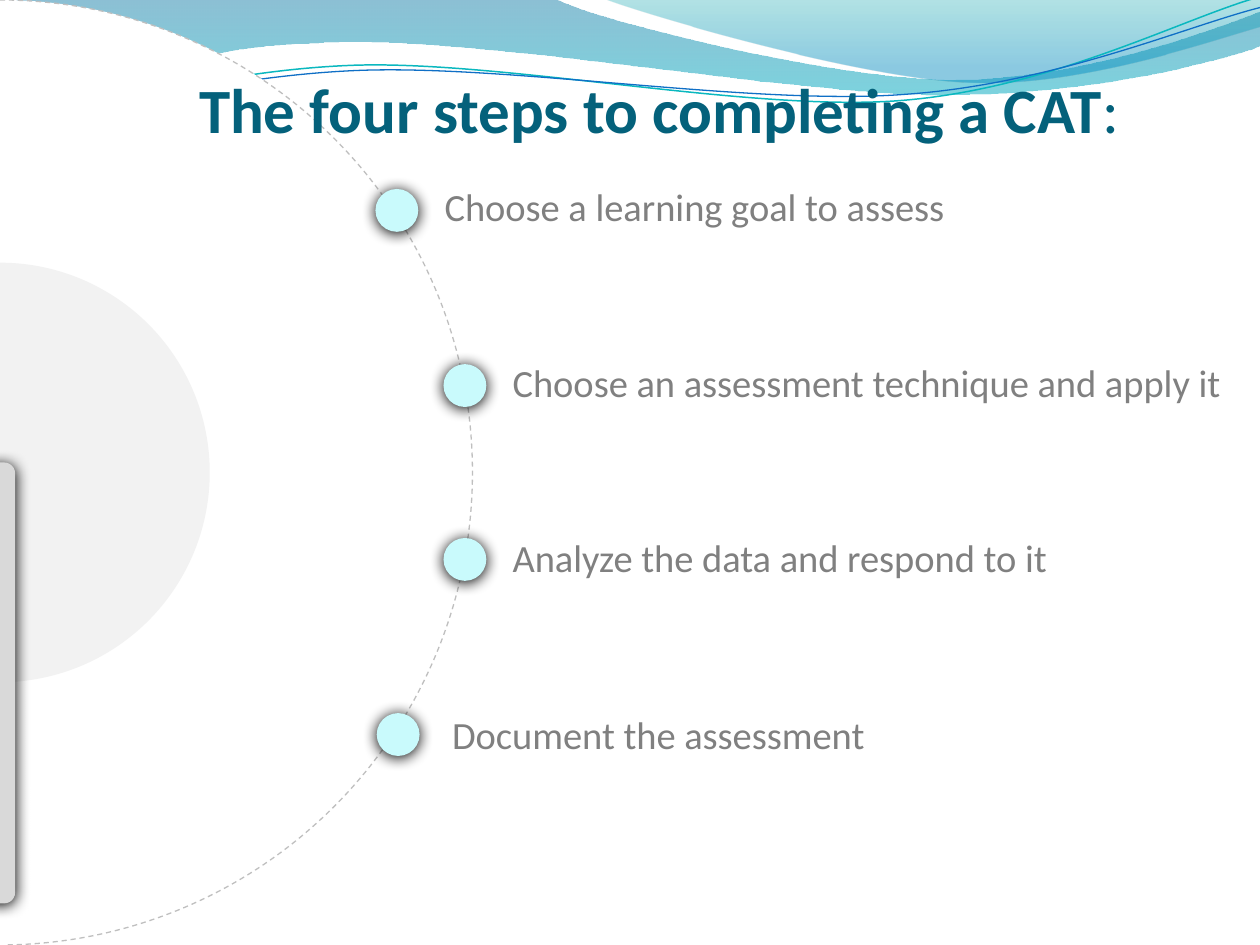
"""Build the slide showing the four steps to completing a CAT."""
from dataclasses import dataclass

from lxml import etree
from pptx import Presentation
from pptx.dml.color import RGBColor
from pptx.enum.dml import MSO_LINE
from pptx.enum.shapes import MSO_SHAPE
from pptx.enum.text import MSO_ANCHOR, MSO_AUTO_SIZE, PP_ALIGN
from pptx.oxml import parse_xml
from pptx.oxml.ns import nsdecls, qn
from pptx.util import Inches, Pt

ARC, OVAL, ROUNDED = MSO_SHAPE.ARC, MSO_SHAPE.OVAL, MSO_SHAPE.ROUNDED_RECTANGLE
DASH = MSO_LINE.DASH
LEFT, BOTTOM = PP_ALIGN.LEFT, MSO_ANCHOR.BOTTOM
FIT_SHAPE, FIT_NONE = MSO_AUTO_SIZE.SHAPE_TO_FIT_TEXT, MSO_AUTO_SIZE.NONE
FONT = "Calibri"
TITLE_COLOR, STEP_COLOR, DOT_COLOR = "04617B", "808080", "C9FAFC"
DOT_SIZE = 0.34


@dataclass
class Step:
    text: str
    text_left: float
    text_top: float
    text_width: float
    dot_left: float
    dot_top: float


@dataclass
class Stop:
    position: float
    color: str
    opacity: int


@dataclass
class Wave:
    points: list
    stops: tuple = ()
    line_color: str = ""
    line_width: float = 0


STEPS = [
    Step("Choose a learning goal to assess", 3.43, 1.4, 4.9, 2.98, 1.5),
    Step("Choose an assessment technique and apply it", 3.97, 2.8, 6.03, 3.52, 2.89),
    Step("Analyze the data and respond to it", 3.97, 4.19, 5.2, 3.52, 4.27),
    Step("Document the assessment", 3.49, 5.59, 3.77, 2.99, 5.66),
]

WAVES = [
    Wave(
        [(0, 0), (4.4, -0.01), (4.76, 0.17, 6.64, 0.63, 7.58, 0.63),
         (8.53, 0.63, 9.58, 0.26, 10, 0.09), (10.01, 0.36),
         (9.83, 0.44, 8.7, 0.76, 7.46, 0.75), (6.22, 0.75, 3.82, 0.28, 2.57, 0.34),
         (1.29, 0.36, 0.46, 0.83, -0.01, 1.13)],
        stops=(Stop(0, "0074A1", 45), Stop(1, "00C6CF", 55)),
    ),
    Wave(
        [(4.79, -0.01), (5.09, 0.11, 6.82, 0.62, 7.69, 0.65),
         (8.56, 0.69, 9.61, 0.32, 10, 0.21), (10, 0)],
        stops=(Stop(0, "00A1A9", 30), Stop(0.8, "008BBF", 45)),
    ),
    Wave(
        [(0, 1.11), (0.48, 0.93, 1.58, 0.57, 2.77, 0.52),
         (3.95, 0.47, 5.93, 0.89, 7.13, 0.8), (8.33, 0.71, 9.38, 0.15, 9.98, -0.02)],
        line_color="0AB8BF", line_width=0.85,
    ),
    Wave(
        [(0, 1.04), (0.47, 0.96, 1.64, 0.61, 2.83, 0.56),
         (4.03, 0.51, 5.97, 0.84, 7.17, 0.75), (8.36, 0.67, 9.41, 0.21, 10, 0.06)],
        line_color="0F6FC6", line_width=0.75,
    ),
]


def rgb(color: str) -> RGBColor:
    """Turn a hex string into a colour."""
    return RGBColor.from_string(color)


def bend(shape, points: list) -> None:
    """Turn the segments that have control points into cubic curves."""
    segments = list(shape._element.iter(qn("a:lnTo")))
    for segment, point in zip(segments, points[1:]):
        if len(point) == 2:
            continue
        segment.tag = qn("a:cubicBezTo")
        for index, (x, y) in enumerate((point[:2], point[2:4])):
            control = etree.Element(
                qn("a:pt"), x=str(Inches(x) - shape.left), y=str(Inches(y) - shape.top))
            segment.insert(index, control)


def add_wave(page, wave: Wave) -> None:
    """Draw one filled wave or one wavy line."""
    start, *rest = [(Inches(point[-2]), Inches(point[-1])) for point in wave.points]
    builder = page.shapes.build_freeform(*start)
    builder.add_line_segments(rest, close=bool(wave.stops))
    shape = builder.convert_to_shape()
    bend(shape, wave.points)
    shape.shadow.inherit = False
    if not wave.stops:
        shape.fill.background()
        shape.line.color.rgb = rgb(wave.line_color)
        shape.line.width = Pt(wave.line_width)
        return
    shape.line.fill.background()
    shape.fill.gradient()
    shape.fill.gradient_angle = 270
    for target, stop in zip(shape.fill.gradient_stops, wave.stops):
        target.position = stop.position
        target.color.rgb = rgb(stop.color)
    colors = shape._element.spPr.iter(qn("a:srgbClr"))
    for color, stop in zip(colors, wave.stops):
        etree.SubElement(color, qn("a:alpha"), val=str(stop.opacity * 1000))


def add_plain(page, kind, left: float, top: float, width: float, height: float, color: str):
    """Add a preset shape with a flat fill, no outline and no shadow."""
    shape = page.shapes.add_shape(kind, Inches(left), Inches(top), Inches(width), Inches(height))
    shape.fill.solid()
    shape.fill.fore_color.rgb = rgb(color)
    shape.line.fill.background()
    shape.shadow.inherit = False
    return shape


def add_arc(page, diameter: float, end: float, color: str):
    """Add a half disc centred on the left edge of the slide."""
    radius = diameter / 2
    arc = add_plain(page, ARC, -radius, 3.75 - radius, diameter, diameter, color)
    arc.adjustments[0] = 162
    arc.adjustments[1] = end
    return arc


def add_shadow(shape) -> None:
    """Give a shape a soft black shadow just below it."""
    effects = shape._element.spPr.find(qn("a:effectLst"))
    effects.append(parse_xml(
        f'<a:outerShdw {nsdecls("a")} blurRad="{Pt(8.5)}" dist="{Pt(1)}" dir="5400000"'
        ' algn="ctr" rotWithShape="0"><a:srgbClr val="000000"/></a:outerShdw>'
    ))


def add_label(page, step: Step) -> None:
    """Write the text of one step."""
    box = page.shapes.add_textbox(
        Inches(step.text_left), Inches(step.text_top), Inches(step.text_width), Inches(0.47))
    box.text_frame.word_wrap = True
    box.text_frame.auto_size = FIT_SHAPE
    para = box.text_frame.paragraphs[0]
    para.text = step.text
    para.font.name, para.font.size = FONT, Pt(22)
    para.font.color.rgb = rgb(STEP_COLOR)


def place_title(page) -> None:
    """Fill the title placeholder and bring it to the front."""
    title = page.shapes.title
    title.left, title.top = Inches(1.58), Inches(0.33)
    title.width, title.height = Inches(9.33), Inches(0.83)
    frame = title.text_frame
    frame.margin_left = frame.margin_right = frame.margin_bottom = 0
    frame.margin_top = Inches(0.05)
    frame.vertical_anchor, frame.auto_size = BOTTOM, FIT_NONE
    para = frame.paragraphs[0]
    para.alignment = LEFT
    para.font.name, para.font.size = FONT, Pt(36)
    para.font.color.rgb = rgb(TITLE_COLOR)
    for text, bold in (("The four steps to completing a CAT", True), (":", False)):
        span = para.add_run()
        span.text, span.font.bold = text, bold
    page.shapes._spTree.append(title._element)


def main() -> None:
    """Build and save the deck."""
    deck = Presentation()
    deck.slide_width, deck.slide_height = Inches(10), Inches(7.5)
    page = deck.slides.add_slide(deck.slide_layouts[5])
    for wave in WAVES:
        add_wave(page, wave)
    outline = add_arc(page, 7.5, 53.71, "FFFFFF").line
    outline.color.rgb = rgb("BFBFBF")
    outline.width, outline.dash_style = Pt(0.75), DASH
    for step in STEPS:
        add_label(page, step)
    for step in STEPS:
        add_shadow(add_plain(
            page, OVAL, step.dot_left, step.dot_top, DOT_SIZE, DOT_SIZE, DOT_COLOR))
    add_arc(page, 3.33, 53.6, "F2F2F2")
    bar = add_plain(page, ROUNDED, -0.13, 3.67, 0.25, 3.5, "D9D9D9")
    bar.adjustments[0], bar.rotation = 0.35, 180
    add_shadow(bar)
    place_title(page)
    deck.save("out.pptx")


if __name__ == "__main__":
    main()
